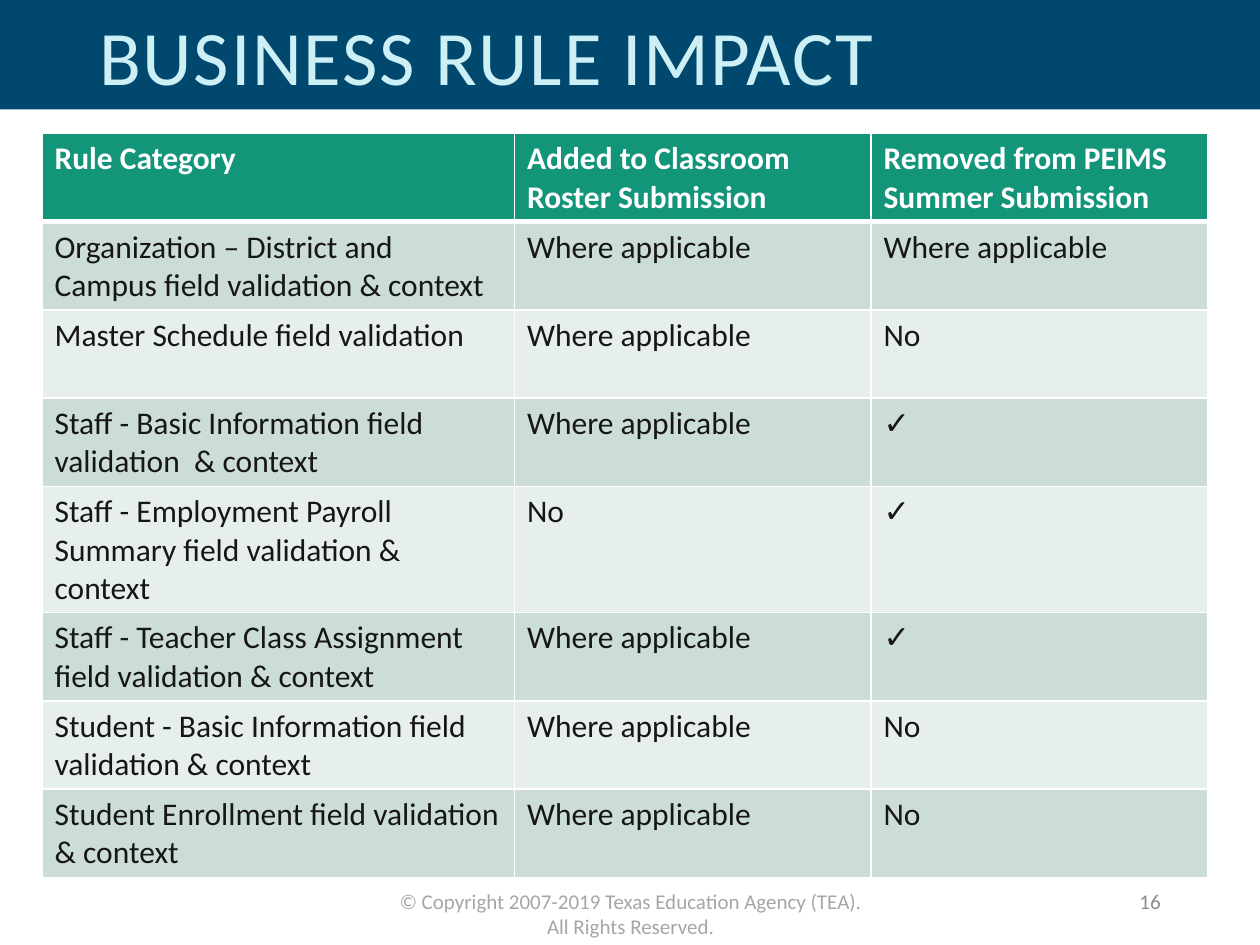
from dataclasses import dataclass

from lxml.etree import SubElement
from pptx import Presentation
from pptx.dml.color import RGBColor
from pptx.enum.shapes import MSO_SHAPE
from pptx.enum.text import MSO_ANCHOR, PP_ALIGN
from pptx.oxml.ns import qn
from pptx.util import Pt


@dataclass(frozen=True)
class Theme:
    face: str = "Calibri"
    bar: str = "00486E"
    title: str = "CCF0F5"
    head: str = "129579"
    bands: tuple = ("CCDDD7", "E7EFEC")
    white: str = "FFFFFF"
    ink: str = "171616"
    note: str = "A6A6A6"
    page: str = "8C8C8C"
    big: int = 44
    body: int = 18
    small: int = 12


@dataclass(frozen=True)
class Label:
    text: str
    box: tuple
    size: int
    color: str
    align: PP_ALIGN
    anchor: MSO_ANCHOR


@dataclass(frozen=True)
class Rule:
    name: str
    added: str
    gone: str
    high: float = 50.4


THEME = Theme()
WHERE, NO, TICK = "Where applicable", "No", "✓"

HEAD = Rule("Rule Category", "Added to Classroom Roster Submission",
            "Removed from PEIMS Summer Submission")
RULES = [
    Rule("Organization – District and  Campus field validation & context",
         WHERE, WHERE),
    Rule("Master Schedule field validation", WHERE, NO),
    Rule("Staff - Basic Information field validation  & context", WHERE, TICK),
    Rule("Staff - Employment Payroll Summary field validation & context",
         NO, TICK, 72),
    Rule("Staff - Teacher Class Assignment field validation & context",
         WHERE, TICK),
    Rule("Student - Basic Information field validation & context", WHERE, NO),
    Rule("Student Enrollment field validation & context", WHERE, NO),
]
WIDTHS = (270, 203.7, 192.3)

TITLE = Label("BUSINESS RULE IMPACT", (49.7, 3.6, 576, 62.6), THEME.big,
              THEME.title, PP_ALIGN.LEFT, MSO_ANCHOR.MIDDLE)
NOTE = Label("© Copyright 2007-2019 Texas Education Agency (TEA). "
             "All Rights Reserved.", (218.9, 504, 283, 36), THEME.small,
             THEME.note, PP_ALIGN.CENTER, MSO_ANCHOR.TOP)
PAGE = Label("16", (508.3, 500.4, 162, 28.8), THEME.small, THEME.page,
             PP_ALIGN.RIGHT, MSO_ANCHOR.MIDDLE)


def style(font, size: int, color: str, bold: bool = False) -> None:
    form = {"name": THEME.face, "size": Pt(size), "bold": bold}
    for key, value in form.items():
        setattr(font, key, value)
    font.color.rgb = RGBColor.from_string(color)


def paint(fill, color: str) -> None:
    fill.solid()
    fill.fore_color.rgb = RGBColor.from_string(color)


def write(slide, label: Label):
    box = slide.shapes.add_textbox(*map(Pt, label.box))
    frame = box.text_frame
    form = {"word_wrap": True, "vertical_anchor": label.anchor}
    for key, value in form.items():
        setattr(frame, key, value)
    par = frame.paragraphs[0]
    par.alignment = label.align
    run = par.add_run()
    run.text = label.text
    style(run.font, label.size, label.color)
    return par


def edge(cell, side: str, width: float) -> None:
    props = cell._tc.get_or_add_tcPr()
    line = SubElement(props, qn(f"a:ln{side}"), w=str(Pt(width)))
    fill = SubElement(line, qn("a:solidFill"))
    SubElement(fill, qn("a:srgbClr"), val=THEME.white)


def draw_row(table, at: int, rule: Rule) -> None:
    first = at == 0
    table.rows[at].height = Pt(rule.high)
    back = THEME.head if first else THEME.bands[(at - 1) % 2]
    color = THEME.white if first else THEME.ink
    edges = {"L": 1, "R": 1, "T": 3 if at == 1 else 1, "B": 3 if first else 1}
    for col, text in enumerate((rule.name, rule.added, rule.gone)):
        cell = table.cell(at, col)
        for side, width in edges.items():
            edge(cell, side, width)
        paint(cell.fill, back)
        run = cell.text_frame.paragraphs[0].add_run()
        run.text = text
        style(run.font, THEME.body, color, first)


def main() -> None:
    deck = Presentation()
    deck.slide_width, deck.slide_height = Pt(720), Pt(540)
    slide = deck.slides.add_slide(deck.slide_layouts[6])

    # Title bar
    bar = slide.shapes.add_shape(MSO_SHAPE.RECTANGLE, 0, 0, Pt(720), Pt(62.6))
    bar.shadow.inherit = False
    paint(bar.fill, THEME.bar)
    bar.line.fill.background()

    # Footer
    for label in (NOTE, PAGE):
        write(slide, label)

    # Rule table
    rows = [HEAD, *RULES]
    high = sum(rule.high for rule in rows)
    table = slide.shapes.add_table(
        len(rows), len(WIDTHS), Pt(24), Pt(76.3), Pt(sum(WIDTHS)), Pt(high)
    ).table
    for col, width in zip(table.columns, WIDTHS):
        col.width = Pt(width)
    for at, rule in enumerate(rows):
        draw_row(table, at, rule)

    # Title with wide letter gaps
    par = write(slide, TITLE)
    par.line_spacing = 0.9
    par.runs[0].font._element.set("spc", "100")

    deck.save("out.pptx")


if __name__ == "__main__":
    main()
